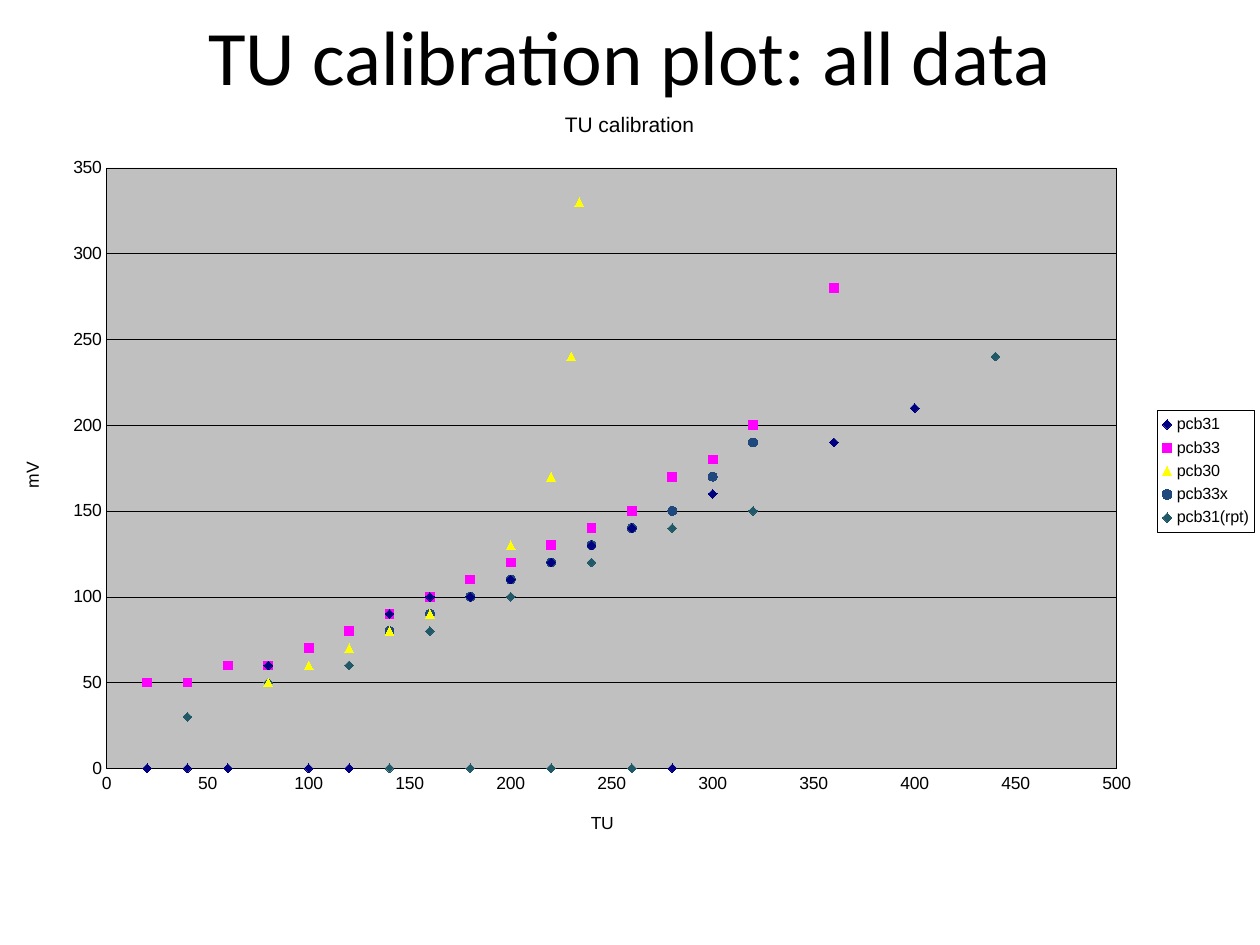
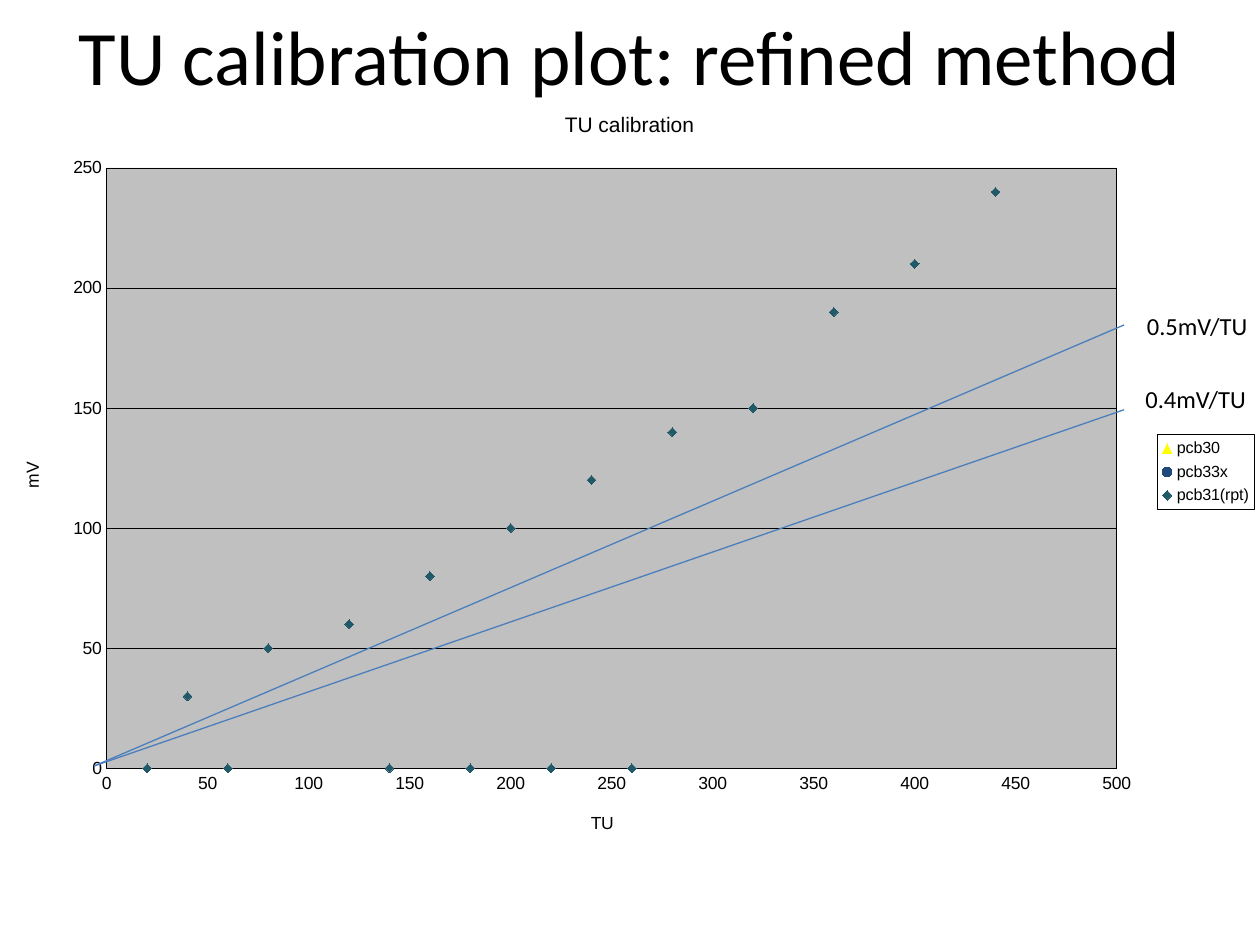
from collections import namedtuple

from pptx import Presentation
from pptx.chart.data import XyChartData
from pptx.dml.color import RGBColor
from pptx.enum.chart import XL_CHART_TYPE, XL_LEGEND_POSITION, XL_MARKER_STYLE, XL_TICK_MARK
from pptx.enum.shapes import MSO_CONNECTOR
from pptx.enum.text import MSO_ANCHOR, PP_ALIGN
from pptx.oxml import parse_xml
from pptx.oxml.ns import nsdecls, qn
from pptx.util import Cm, Pt

BLACK = RGBColor(0x00, 0x00, 0x00)
WHITE = RGBColor(0xFF, 0xFF, 0xFF)
PLOT_GREY = RGBColor(0xC0, 0xC0, 0xC0)
SLOPE_BLUE = RGBColor(0x4B, 0x7E, 0xBC)
NAVY = RGBColor(0x00, 0x00, 0x80)
MAGENTA = RGBColor(0xFF, 0x00, 0xFF)
YELLOW = RGBColor(0xFF, 0xFF, 0x00)
BLUE = RGBColor(0x1F, 0x49, 0x7D)
TEAL = RGBColor(0x21, 0x59, 0x68)

TEXT_FONT = "Calibri"
CHART_FONT = "Arial"
HAIRLINE = Pt(0.25)

Box = namedtuple("Box", "left top width height")
Board = namedtuple("Board", "marker color points")

TITLE_BOX = Box(1.27, 0, 22.86, 2.21)
CHART_BOX = Box(-0.1, 1.73, 25.58, 15.62)


def with_gaps(points):
    """Follow each point with an empty reading."""
    return [reading for point in points for reading in (point, (None, None))]


BOARDS = {
    "pcb31": Board(XL_MARKER_STYLE.DIAMOND, NAVY, with_gaps([
        (220, 120), (240, 130), (180, 100), (160, 100), (200, 110), (140, 90),
        (260, 140), (80, 60), (280, 0), (300, 160), (360, 190), (400, 210),
        (100, 0), (120, 0), (60, 0), (40, 0), (20, 0)])),
    "pcb33": Board(XL_MARKER_STYLE.SQUARE, MAGENTA, with_gaps([
        (220, 130), (240, 140), (180, 110), (160, 100), (200, 120), (140, 90),
        (260, 150), (80, 60), (280, 170), (300, 180), (320, 200), (360, 280),
        (100, 70), (120, 80), (60, 60), (40, 50), (20, 50)])),
    "pcb30": Board(XL_MARKER_STYLE.TRIANGLE, YELLOW, with_gaps([
        (220, 170), (230, 240), (180, 110), (160, 90), (200, 130), (230, 240),
        (234, 330), (234, 330), (140, 80), (120, 70), (100, 60), (80, 50)])),
    "pcb33x": Board(XL_MARKER_STYLE.CIRCLE, BLUE, [
        (140, 80), (160, 90), (180, 100), (200, 110), (220, 120), (240, 130),
        (260, 140), (280, 150), (300, 170), (320, 190), (360, 280)]),
    "pcb31(rpt)": Board(XL_MARKER_STYLE.DIAMOND, TEAL, with_gaps([
        (220, 0), (240, 120), (180, 0), (160, 80), (200, 100), (140, 0),
        (260, 0), (80, 50), (280, 140), (320, 150), (360, 190), (400, 210),
        (440, 240), (120, 60), (60, 0), (40, 30), (20, 0)])),
}


def set_font(font, name, size):
    """Apply a plain black font."""
    font.name, font.size, font.bold = name, Pt(size), False
    font.color.rgb = BLACK


def set_line(line, color, width):
    """Apply a solid line."""
    line.color.rgb, line.width = color, width


def set_layout(element, index, x, y, w=None, h=None, inner=False):
    """Place a chart part by fractions of the chart area."""
    old = element.find(qn("c:layout"))
    if old is not None:
        element.remove(old)
    target = '<c:layoutTarget val="inner"/>' if inner else ""
    sizes = "".join(f'<c:{k} val="{v:.3f}"/>' for k, v in (("x", x), ("y", y), ("w", w), ("h", h))
                    if v is not None)
    element.insert(index, parse_xml(
        f'<c:layout {nsdecls("c")}><c:manualLayout>{target}<c:xMode val="edge"/>'
        f'<c:yMode val="edge"/>{sizes}</c:manualLayout></c:layout>'))


def frame_xml(fill):
    """Return shape properties with a fill and a black hairline."""
    return parse_xml(
        f'<c:spPr {nsdecls("c", "a")}><a:solidFill><a:srgbClr val="{fill}"/></a:solidFill>'
        f'<a:ln w="{HAIRLINE}"><a:solidFill><a:srgbClr val="{BLACK}"/></a:solidFill></a:ln></c:spPr>')


def add_chart_title(owner, text, size, x, y):
    """Title a chart or an axis."""
    owner.has_title = True
    title = owner.chart_title if hasattr(owner, "chart_title") else owner.axis_title
    tf = title.text_frame
    tf.text = text
    set_font(tf.paragraphs[0].font, CHART_FONT, size)
    set_layout(title._element, 1, x, y)
    return tf


def style_axis(axis, maximum, gridlines):
    """Scale an axis from zero in steps of 50."""
    axis.minimum_scale, axis.maximum_scale, axis.major_unit = 0, maximum, 50
    axis.major_tick_mark = axis.minor_tick_mark = XL_TICK_MARK.NONE
    axis.has_major_gridlines = gridlines
    set_font(axis.tick_labels.font, CHART_FONT, 10)
    set_line(axis.format.line, BLACK, HAIRLINE)
    if gridlines:
        set_line(axis.major_gridlines.format.line, BLACK, HAIRLINE)


def style_series(series, board, drawn):
    """Mark a series, with its points drawn or only its legend key."""
    marker = series.marker
    marker.style, marker.size = board.marker, 5
    marker.format.fill.solid()
    marker.format.fill.fore_color.rgb = board.color
    marker.format.line.color.rgb = board.color
    if not drawn:
        for i, (tu, _) in enumerate(board.points):
            if tu is not None:
                series.points[i].marker.style = XL_MARKER_STYLE.NONE


def style_legend(chart, count):
    """Centre the framed legend at the right."""
    chart.has_legend = True
    legend = chart.legend
    legend.position = XL_LEGEND_POSITION.RIGHT
    legend.include_in_layout = False
    set_font(legend.font, CHART_FONT, 9.2)
    height = 0.03 * count + 0.007
    set_layout(legend._element, 1, 0.916, 0.498 - height / 2, 0.076, height)
    legend._element.find(qn("c:txPr")).addprevious(frame_xml(WHITE))


def add_calibration_chart(s, box, names, drawn, maximum):
    """Plot mV against TU for the named boards."""
    data = XyChartData()
    for name in names:
        series = data.add_series(name)
        for tu, mv in BOARDS[name].points:
            series.add_data_point(tu, mv)
    chart = s.shapes.add_chart(XL_CHART_TYPE.XY_SCATTER, *map(Cm, box), data).chart
    set_font(chart.font, CHART_FONT, 10)
    chart.plots[0].vary_by_categories = False
    for series in chart.plots[0].series:
        style_series(series, BOARDS[series.name], series.name in drawn)
    style_axis(chart.category_axis, 500, False)
    style_axis(chart.value_axis, maximum, True)
    add_chart_title(chart, "TU calibration", 12, 0.446, 0.029)
    add_chart_title(chart.category_axis, "TU", 10, 0.467, 0.933)
    tf = add_chart_title(chart.value_axis, "mV", 10, 0.018, 0.482)
    tf._txBody.bodyPr.set("rot", "-5400000")
    tf._txBody.bodyPr.set("vert", "horz")
    style_legend(chart, len(names))
    plot_area = chart._chartSpace.chart.plotArea
    set_layout(plot_area, 0, 0.088, 0.106, 0.796, 0.775, inner=True)
    plot_area.append(frame_xml(PLOT_GREY))


def add_slope(s, box, text, end_y, label_x, label_y):
    """Draw a labelled slope line from the chart's zero point."""
    line = s.shapes.add_connector(
        MSO_CONNECTOR.STRAIGHT, Cm(box.left + 2), Cm(box.top + 13.71),
        Cm(box.left + 22.76), Cm(box.top + end_y))
    set_line(line.line, SLOPE_BLUE, Pt(0.75))
    line._element.spPr.append(parse_xml(f'<a:effectLst {nsdecls("a")}/>'))
    tf = s.shapes.add_textbox(
        Cm(box.left + label_x), Cm(box.top + label_y), Cm(2.57), Cm(0.86)).text_frame
    tf.word_wrap = False
    tf.text = text
    set_font(tf.paragraphs[0].font, TEXT_FONT, 14)


def add_titled_slide(prs, text, box):
    """Add a slide with a centred title."""
    s = prs.slides.add_slide(prs.slide_layouts[5])
    title = s.shapes.title
    title.left, title.top, title.width, title.height = map(Cm, box)
    tf = title.text_frame
    tf.text = text
    tf.vertical_anchor = MSO_ANCHOR.MIDDLE
    p = tf.paragraphs[0]
    p.alignment = PP_ALIGN.CENTER
    set_font(p.font, TEXT_FONT, 44)
    return s


def main():
    """Build the two calibration slides."""
    prs = Presentation()
    prs.slide_width, prs.slide_height = Cm(25.4), Cm(19.05)
    names = list(BOARDS)

    s = add_titled_slide(prs, "TU calibration plot: all data", TITLE_BOX)
    add_calibration_chart(s, CHART_BOX, names, names, 350)

    s = add_titled_slide(prs, "TU calibration plot: refined method", TITLE_BOX)
    add_calibration_chart(s, CHART_BOX, names[2:], names[4:], 250)
    add_slope(s, CHART_BOX, "0.4mV/TU", 6.53, 22.94, 5.89)
    add_slope(s, CHART_BOX, "0.5mV/TU", 4.82, 22.97, 4.42)

    prs.save("out.pptx")


if __name__ == "__main__":
    main()
